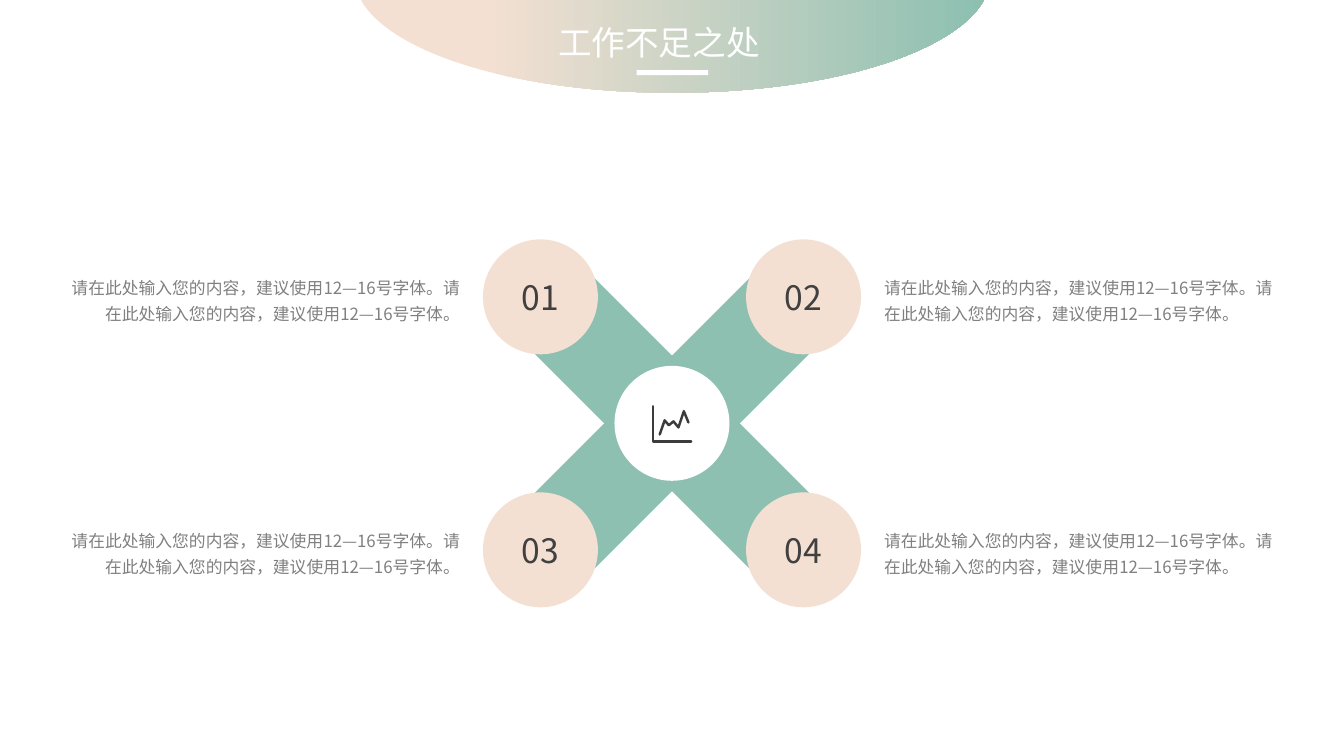
from dataclasses import dataclass

from lxml import etree
from pptx import Presentation
from pptx.dml.color import RGBColor
from pptx.enum.shapes import MSO_SHAPE
from pptx.enum.text import MSO_ANCHOR, MSO_AUTO_SIZE, PP_ALIGN
from pptx.oxml.ns import qn
from pptx.util import Inches, Pt

OVAL, RECT, PILL = MSO_SHAPE.OVAL, MSO_SHAPE.RECTANGLE, MSO_SHAPE.ROUNDED_RECTANGLE
LEFT, RIGHT, CENTER, JUSTIFY = PP_ALIGN.LEFT, PP_ALIGN.RIGHT, PP_ALIGN.CENTER, PP_ALIGN.JUSTIFY
TOP, MIDDLE = MSO_ANCHOR.TOP, MSO_ANCHOR.MIDDLE
NO_FIT = MSO_AUTO_SIZE.NONE
WIDE, HIGH = 13.33, 7.5


@dataclass(frozen=True)
class Theme:
    font: str = "Noto Sans CJK SC"
    green: str = "8DC0B1"
    peach: str = "F3E0D2"
    white: str = "FFFFFF"
    dark: str = "404040"
    gray: str = "808080"
    ink: str = "3C3C3C"
    head: int = 24
    body: int = 12


THEME = Theme()
TITLE = "工作不足之处"
HINT = "请在此处输入您的内容，建议使用12—16号字体。"


def color(code):
    return RGBColor.from_string(code)


def paint(shape, fill):
    shape.shadow.inherit = False
    shape.fill.solid()
    shape.fill.fore_color.rgb = color(fill)
    shape.line.fill.background()
    return shape


def add_form(slide, kind, mid_x, mid_y, wide, high, fill):
    box = (mid_x - wide / 2, mid_y - high / 2, wide, high)
    return paint(slide.shapes.add_shape(kind, *map(Inches, box)), fill)


def add_path(slide, dots, closed):
    start, *rest = [(Inches(x), Inches(y)) for x, y in dots]
    pen = slide.shapes.build_freeform(*start)
    pen.add_line_segments(rest, close=closed)
    shape = pen.convert_to_shape()
    shape.shadow.inherit = False
    return shape


def write(shape, text, size, shade, align, anchor=TOP, space=1.0):
    frame = shape.text_frame
    frame.text = text
    frame.word_wrap = True
    frame.auto_size = NO_FIT
    frame.vertical_anchor = anchor
    line = frame.paragraphs[0]
    line.alignment = align
    line.line_spacing = space
    for run in line.runs:
        run.font.name = THEME.font
        run.font.size = Pt(size)
        run.font.color.rgb = color(shade)
        east = etree.SubElement(run.font._element, qn("a:ea"))
        east.set("typeface", THEME.font)
        run.font._element.find(qn("a:latin")).addnext(east)


def curve(ends, steps=40):
    a, b, c, d = ends
    for step in range(steps + 1):
        t = step / steps
        u = 1 - t
        yield tuple(
            u**3 * p + 3 * u * u * t * q + 3 * u * t * t * r + t**3 * s
            for p, q, r, s in zip(a, b, c, d)
        )


def add_head(slide, left, top, wide, high):
    mid = left + wide / 2
    side = [(0.5, 0.01), (0.45, 0.58), (0.25, 1), (0, 1)]
    half = list(curve([(wide * x, high * y) for x, y in side]))
    arc = [(mid + x, top + y) for x, y in half]
    arc += [(mid - x, top + y) for x, y in reversed(half[:-1])]
    dome = add_path(slide, [(left, top), (left + wide, top), *arc], True)
    dome.line.fill.background()
    dome.fill.gradient()
    dome.fill.gradient_angle = 0
    for stop, place, shade in zip(dome.fill.gradient_stops, (0.2, 1), (THEME.peach, THEME.green)):
        stop.position = place
        stop.color.rgb = color(shade)

    title = slide.shapes.title
    box = (mid - wide * 0.2, top + 0.17, wide * 0.4, 0.5)
    title.left, title.top, title.width, title.height = map(Inches, box)
    write(title, TITLE, THEME.head, THEME.white, JUSTIFY)
    slide.shapes.element.append(title.element)
    add_form(slide, RECT, mid, top + 0.72, 0.71, 0.05, THEME.white)


def add_icon(slide, left, top, wide, high):
    axes = [(0, 0), (0, 1), (1, 1)]
    trend = [(0.18, 0.8), (0.31, 0.4), (0.42, 0.54), (0.54, 0.43),
             (0.67, 0.6), (0.81, 0.14), (0.93, 0.46)]
    for dots in (axes, trend):
        spots = [(left + wide * x, top + high * y) for x, y in dots]
        line = add_path(slide, spots, False)
        line.fill.background()
        line.line.color.rgb = color(THEME.ink)
        line.line.width = Pt(1.75)
        stroke = line.line._get_or_add_ln()
        stroke.set("cap", "rnd")
        etree.SubElement(stroke, qn("a:round"))


def add_cross(slide, left, top, wide, high):
    mid_x, mid_y = left + wide / 2, top + high / 2
    disc, gap, text_w, text_h = 1.14, 0.13, 4.16, 0.6
    for turn in (45, -45):
        arm = add_form(slide, PILL, mid_x, mid_y, 0.95, 4.53, THEME.green)
        arm.adjustments[0] = 0.5
        arm.rotation = turn
    for index in range(4):
        row, col = divmod(index, 2)
        x = left + disc / 2 + col * (wide - disc)
        y = top + disc / 2 + row * (high - disc)
        node = add_form(slide, OVAL, x, y, disc, disc, THEME.peach)
        write(node, f"{index + 1:02}", THEME.head, THEME.dark, CENTER, MIDDLE)
        text_x = left + wide + gap if col else left - gap - text_w
        box = (text_x, y - text_h / 2, text_w, text_h)
        note = slide.shapes.add_textbox(*map(Inches, box))
        write(note, HINT * 2, THEME.body, THEME.gray, LEFT if col else RIGHT, space=1.3)
    add_form(slide, OVAL, mid_x, mid_y, disc, disc, THEME.white)
    add_icon(slide, mid_x - 0.19, mid_y - 0.17, 0.38, 0.35)


def main():
    deck = Presentation()
    deck.slide_width, deck.slide_height = Inches(WIDE), Inches(HIGH)
    slide = deck.slides.add_slide(deck.slide_layouts[5])
    add_cross(slide, WIDE / 2 - 1.875, HIGH * 0.56 - 1.825, 3.75, 3.65)
    add_head(slide, WIDE / 2 - 3.08, 0, 6.17, 0.92)
    deck.save("out.pptx")


if __name__ == "__main__":
    main()
